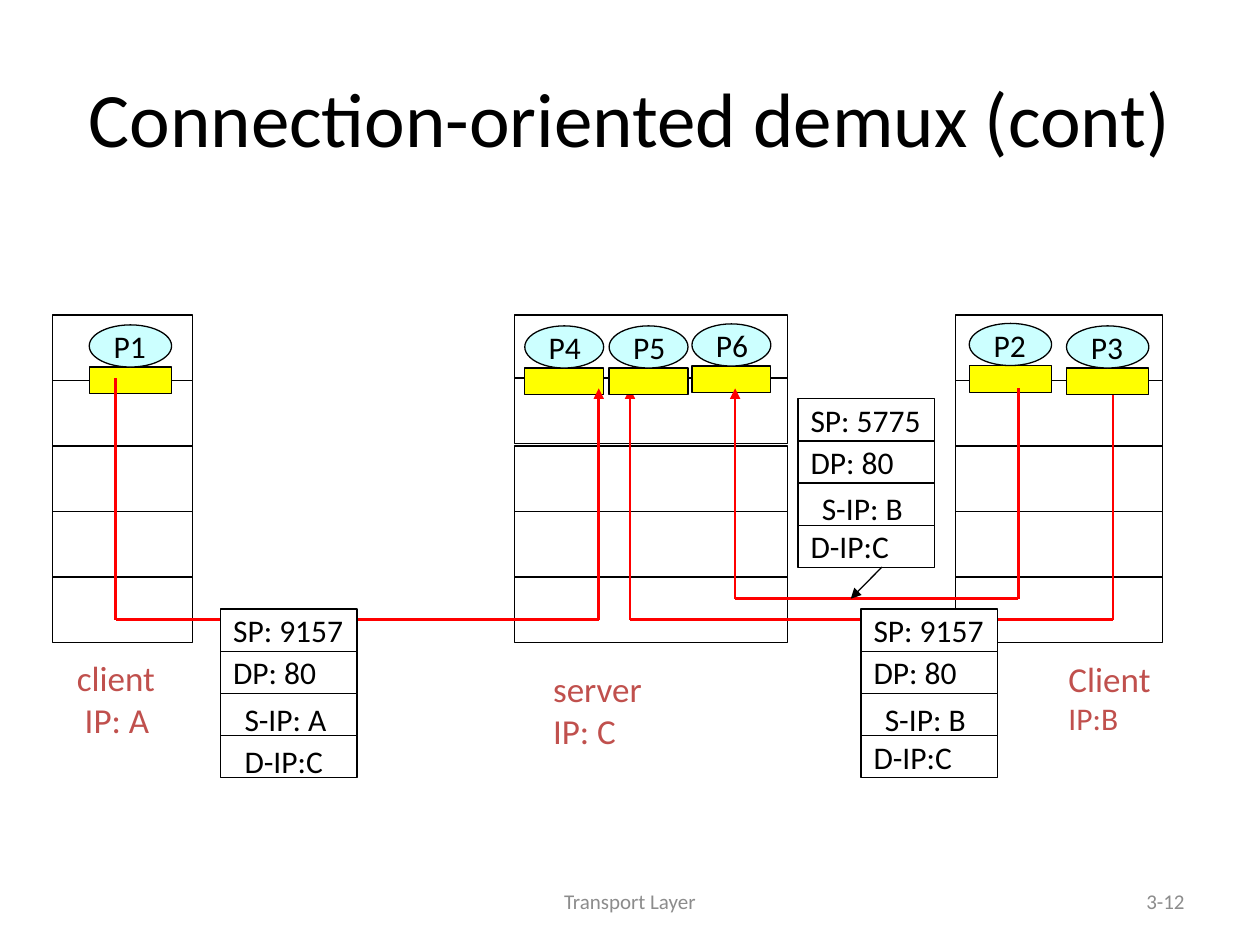
from lxml import etree
from pptx import Presentation
from pptx.dml.color import RGBColor
from pptx.enum.shapes import MSO_CONNECTOR, MSO_SHAPE
from pptx.enum.text import MSO_ANCHOR, PP_ALIGN
from pptx.oxml.ns import qn
from pptx.util import Cm, Pt

BLACK = RGBColor(0x00, 0x00, 0x00)
WHITE = RGBColor(0xFF, 0xFF, 0xFF)
RED = RGBColor(0xFF, 0x00, 0x00)
YELLOW = RGBColor(0xFF, 0xFF, 0x00)
PALE_BLUE = RGBColor(0xCC, 0xFF, 0xFF)
BRICK = RGBColor(0xC0, 0x50, 0x4D)
GREY = RGBColor(0x8C, 0x8C, 0x8C)

STACK_TOP = 6.35
LAYER_HEIGHT = 1.32
PROCESS_HEIGHT, SOCKET_HEIGHT = 0.85, 0.54
FIELD_WIDTH, FIELD_HEIGHT = 2.75, 0.85
FIELD_INDENT = 0.23
ARROW_TIP = 7.83


def write(shape, lines, color, sizes, align=PP_ALIGN.LEFT,
          anchor=MSO_ANCHOR.MIDDLE, wrap=False):
    frame = shape.text_frame
    frame.word_wrap = wrap
    frame.vertical_anchor = anchor
    frame.text = "\n".join(lines)
    for paragraph, size in zip(frame.paragraphs, sizes):
        paragraph.alignment = align
        paragraph.font.name = "Calibri"
        paragraph.font.size = Pt(size)
        paragraph.font.color.rgb = color


def add_outlined(slide, preset, box, fill, text=None):
    shape = slide.shapes.add_shape(preset, *map(Cm, box))
    shape.shadow.inherit = False
    shape.fill.solid()
    shape.fill.fore_color.rgb = fill
    shape.line.color.rgb = BLACK
    shape.line.width = Pt(0.75)
    if text:
        write(shape, [text], BLACK, [18])


def add_text(slide, box, lines, color, sizes, **layout):
    write(slide.shapes.add_textbox(*map(Cm, box)), lines, color, sizes, **layout)


def add_line(slide, start, end, color=RED, width=1.5, arrow=False):
    line = slide.shapes.add_connector(MSO_CONNECTOR.STRAIGHT, *map(Cm, start + end))
    line.line.color.rgb = color
    line.line.width = Pt(width)
    if arrow:
        etree.SubElement(line.line._get_or_add_ln(), qn("a:tailEnd"), type="triangle")
    etree.SubElement(line._element.spPr, qn("a:effectLst"))


def add_stack(slide, left, width, second_top=STACK_TOP + LAYER_HEIGHT):
    """Five protocol layers of one host."""
    tops = [STACK_TOP + layer * LAYER_HEIGHT for layer in range(5)]
    tops[1] = second_top
    for top in tops:
        add_outlined(slide, MSO_SHAPE.RECTANGLE, (left, top, width, LAYER_HEIGHT), WHITE)


def add_process(slide, name, left, top, width):
    """Process oval standing on its socket."""
    add_outlined(slide, MSO_SHAPE.RECTANGLE,
                 (left, top + PROCESS_HEIGHT, width, SOCKET_HEIGHT), YELLOW)
    add_outlined(slide, MSO_SHAPE.OVAL, (left, top, width, PROCESS_HEIGHT), PALE_BLUE, name)


def add_connection(slide, client_x, client_top, server_x, bottom):
    """Path down from a client socket, across and up to a server socket."""
    add_line(slide, (client_x, client_top), (client_x, bottom))
    add_line(slide, (client_x, bottom), (server_x, bottom))
    add_line(slide, (server_x, bottom), (server_x, ARROW_TIP), arrow=True)


def add_packet(slide, left, top, fields, indented):
    """Segment header; indented fields sit lower in their row."""
    for row, field in enumerate(fields):
        field_top = top + row * FIELD_HEIGHT
        loose = row in indented
        add_outlined(slide, MSO_SHAPE.RECTANGLE,
                     (left, field_top, FIELD_WIDTH, FIELD_HEIGHT), WHITE,
                     None if loose else field)
        if loose:
            add_text(slide, (left + FIELD_INDENT, field_top, 2.45, 0.94),
                     [field], BLACK, [18], anchor=MSO_ANCHOR.TOP)


def add_host_label(slide, box, lines, sizes=(20, 20)):
    add_text(slide, box, lines, BRICK, sizes, anchor=MSO_ANCHOR.TOP)


def add_title_and_footer(slide):
    add_text(slide, (1.27, 0.76, 22.86, 3.18), ["Connection-oriented demux (cont)"],
             BLACK, [44], align=PP_ALIGN.CENTER, wrap=True)
    add_text(slide, (8.68, 17.66, 8.04, 1.01), ["Transport Layer"],
             GREY, [12], align=PP_ALIGN.CENTER, wrap=True)
    add_text(slide, (18.2, 17.66, 5.93, 1.01), ["3-12"],
             GREY, [12], align=PP_ALIGN.RIGHT, wrap=True)


def add_demux_diagram(slide):
    # Hosts
    add_stack(slide, 1.06, 2.82)
    add_stack(slide, 19.26, 4.18)
    add_stack(slide, 10.37, 5.5, second_top=7.62)
    add_host_label(slide, (1.3, 13.11, 2.41, 1.96), ["client", " IP: A"])
    add_host_label(slide, (10.9, 13.34, 2.67, 1.96), ["server", "IP: C"])
    add_host_label(slide, (21.29, 13.13, 2.41, 1.78), ["Client", "IP:B"], (20, 18))

    # Processes whose sockets lie behind the connections
    add_process(slide, "P1", 1.8, 6.55, 1.66)
    add_process(slide, "P2", 19.54, 6.52, 1.66)
    add_process(slide, "P4", 10.58, 6.57, 1.59)
    add_process(slide, "P6", 13.95, 6.53, 1.59)

    # Connections
    add_connection(slide, 2.33, 7.62, 12.07, 12.49)
    add_connection(slide, 22.44, 7.62, 12.7, 12.49)
    add_connection(slide, 20.53, ARROW_TIP, 14.82, 12.07)

    # Processes whose sockets cover the connection ends
    add_process(slide, "P5", 12.28, 6.57, 1.59)
    add_process(slide, "P3", 21.5, 6.57, 1.66)

    # Segment headers
    add_packet(slide, 4.45, 12.28, ["SP: 9157", "DP: 80", "S-IP: A", "D-IP:C"], {2, 3})
    add_packet(slide, 17.36, 12.28, ["SP: 9157", "DP: 80", "S-IP: B", "D-IP:C"], {2})
    add_packet(slide, 16.09, 8.04, ["SP: 5775", "DP: 80", "S-IP: B", "D-IP:C"], {2})
    add_line(slide, (17.78, 11.43), (17.15, 12.07), BLACK, 0.75, arrow=True)


def main():
    deck = Presentation()
    deck.slide_width, deck.slide_height = Cm(25.4), Cm(19.05)
    slide = deck.slides.add_slide(deck.slide_layouts[6])
    add_title_and_footer(slide)
    add_demux_diagram(slide)
    deck.save("out.pptx")


if __name__ == "__main__":
    main()
